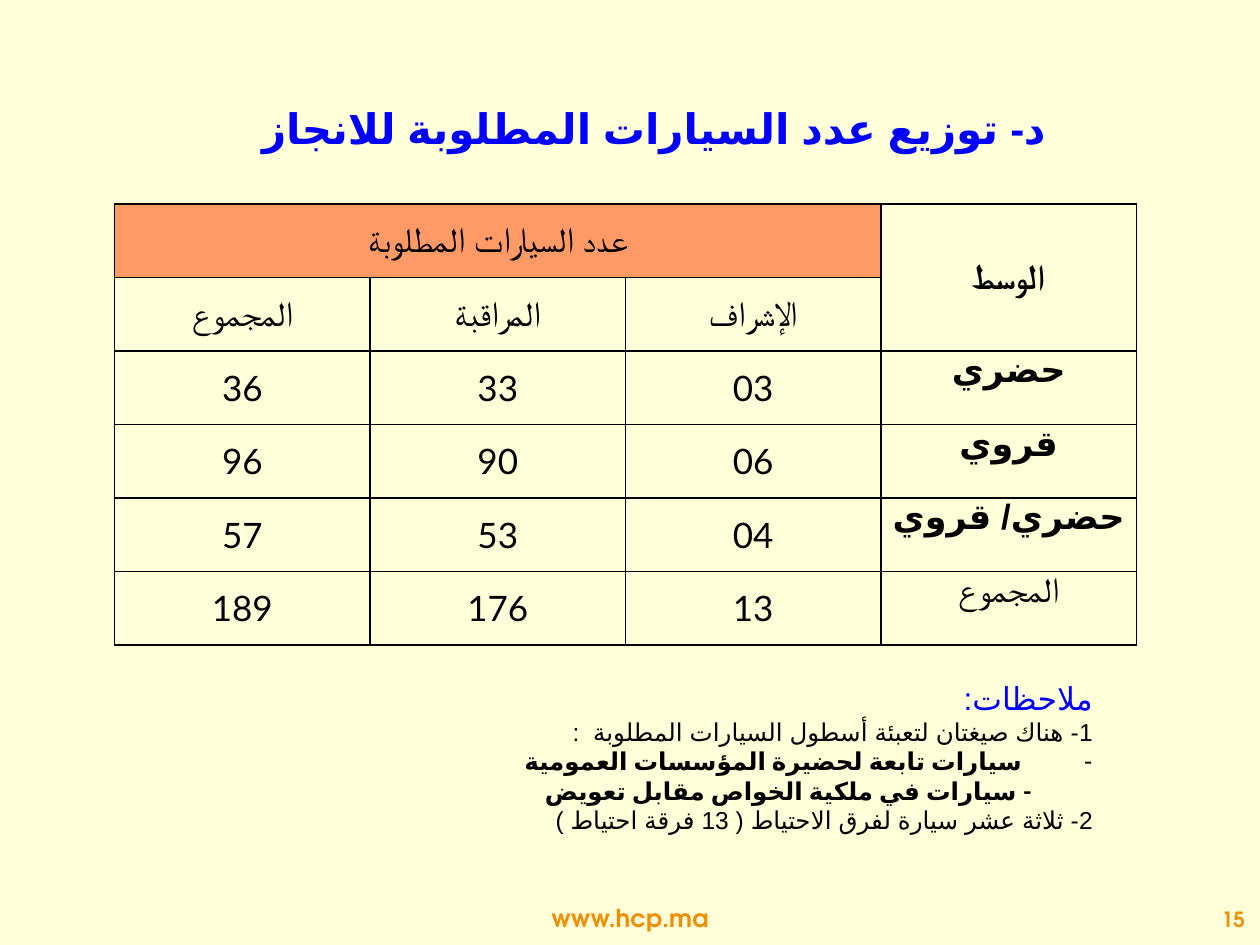
"""Build the slide on the distribution of required cars."""
from dataclasses import dataclass

from lxml import etree
from pptx import Presentation
from pptx.dml.color import RGBColor
from pptx.enum.lang import MSO_LANGUAGE_ID
from pptx.enum.text import MSO_ANCHOR, PP_ALIGN
from pptx.oxml.ns import qn
from pptx.util import Inches, Pt

ARABIC = MSO_LANGUAGE_ID.ARABIC_MOROCCO
TOP, MIDDLE = MSO_ANCHOR.TOP, MSO_ANCHOR.MIDDLE
CENTER, RIGHT = PP_ALIGN.CENTER, PP_ALIGN.RIGHT
COLORS = {"page": "FFFFD9", "blue": "0000FF", "black": "000000",
          "header": "FF9966", "orange": "F18E00"}
NOTE_INDENT = 0.74
CELL_FORMAT = {"margin_left": Inches(0.05), "margin_right": Inches(0.05),
               "margin_top": 0, "margin_bottom": 0}


@dataclass
class Line:
    text: str
    size: int
    font: str = "Arial"
    color: str = "black"
    bold: bool = False
    rtl: bool = False
    align: PP_ALIGN = CENTER
    margin: float = 0
    indent: float = 0
    bullet: str = ""


@dataclass
class Block:
    left: float
    top: float
    width: float
    height: float
    lines: list[Line]
    anchor: MSO_ANCHOR = MIDDLE


def rgb(name: str) -> RGBColor:
    return RGBColor.from_string(COLORS[name])


def write_line(paragraph, line: Line) -> None:
    paragraph.alignment = line.align
    properties = paragraph._p.get_or_add_pPr()
    if line.rtl:
        properties.set("rtl", "1")
    if line.indent:
        properties.set("marL", str(Inches(line.margin)))
        properties.set("indent", str(Inches(line.indent)))
    if line.bullet:
        etree.SubElement(properties, qn("a:buFont"), typeface=line.font)
        etree.SubElement(properties, qn("a:buChar"), char=line.bullet)
    run = paragraph.add_run()
    run.text = line.text
    font_format = {"name": line.font, "size": Pt(line.size), "bold": line.bold,
                   "language_id": ARABIC}
    for key, value in font_format.items():
        setattr(run.font, key, value)
    run.font.color.rgb = rgb(line.color)
    etree.SubElement(run._r.get_or_add_rPr(), qn("a:cs"), typeface=line.font)


def add_block(slide, block: Block) -> None:
    box = slide.shapes.add_textbox(Inches(block.left), Inches(block.top),
                                   Inches(block.width), Inches(block.height))
    frame = box.text_frame
    frame.word_wrap = True
    frame.vertical_anchor = block.anchor
    for index, line in enumerate(block.lines):
        write_line(frame.add_paragraph() if index else frame.paragraphs[0], line)


def add_borders(cell) -> None:
    properties = cell._tc.get_or_add_tcPr()
    for side in ("lnL", "lnR", "lnT", "lnB"):
        border = etree.SubElement(properties, qn(f"a:{side}"), w=str(Pt(1)))
        fill = etree.SubElement(border, qn("a:solidFill"))
        etree.SubElement(fill, qn("a:srgbClr"), val=COLORS["black"])


def cell_line(text: str, row: int, column: int) -> Line:
    is_setting = column == 3 and 2 <= row <= 4
    if is_setting:
        return Line(text, 20, bold=True, rtl=True)
    if row >= 2 and column < 3:
        return Line(text, 20, "Lato")
    return Line(text, 20, "Times New Roman", bold=row == 0 and column == 3)


def add_car_table(slide, rows: list[list[str]]) -> None:
    table = slide.shapes.add_table(len(rows), len(rows[0]), Inches(0.91), Inches(1.62),
                                   Inches(8.11), Inches(3.5)).table
    table.first_row = table.horz_banding = False
    for row, texts in enumerate(rows):
        for column, text in enumerate(texts):
            cell = table.cell(row, column)
            for key, value in CELL_FORMAT.items():
                setattr(cell, key, value)
            cell.vertical_anchor = TOP if row >= 2 and column == 3 else MIDDLE
            add_borders(cell)
            if row == 0 and column < 3:
                cell.fill.solid()
                cell.fill.fore_color.rgb = rgb("header")
            else:
                cell.fill.background()
            if text:
                write_line(cell.text_frame.paragraphs[0], cell_line(text, row, column))
    table.cell(0, 0).merge(table.cell(0, 2))
    table.cell(0, 3).merge(table.cell(1, 3))


def note(text: str, size: int = 14, indent: float = NOTE_INDENT, **style) -> Line:
    return Line(text, size, rtl=True, align=RIGHT, indent=indent, **style)


CAR_ROWS = [
    ["عدد السيارات المطلوبة", "", "", "الوسط"],
    ["المجموع", "المراقبة", "الإشراف", ""],
    ["36", "33", "03", "حضري"],
    ["96", "90", "06", "قروي"],
    ["57", "53", "04", "حضري/ قروي"],
    ["189", "176", "13", "المجموع"],
]
BRAND_STYLE = {"font": "TeX Gyre Adventor", "color": "orange", "bold": True}
FLEET_STYLE = {"font": "Lato", "bold": True}
BLOCKS = [
    Block(3.82, 7.12, 2.36, 0.33, [Line("www.hcp.ma", 14, **BRAND_STYLE)]),
    Block(1.33, 0.7, 7.72, 0.63, [
        Line("د- توزيع عدد السيارات المطلوبة للانجاز", 24, color="blue", bold=True, rtl=True)]),
    Block(0.39, 5.34, 9.12, 1.35, [
        note("ملاحظات:", 18, color="blue"),
        note("1- هناك صيغتان لتعبئة أسطول السيارات المطلوبة  :"),
        note("سيارات تابعة لحضيرة المؤسسات العمومية", indent=-0.56,
             margin=NOTE_INDENT + 0.56, bullet="-", **FLEET_STYLE),
        note("- سيارات في ملكية الخواص مقابل تعويض", indent=NOTE_INDENT + 0.48, **FLEET_STYLE),
        note("2- ثلاثة عشر سيارة لفرق الاحتياط ( 13 فرقة احتياط )"),
    ], TOP),
    Block(8.46, 7.12, 1.52, 0.35, [Line("15", 12, align=RIGHT, **BRAND_STYLE)]),
]


def main() -> None:
    deck = Presentation()
    deck.slide_width, deck.slide_height = Inches(10), Inches(7.5)
    slide = deck.slides.add_slide(deck.slide_layouts[6])
    slide.background.fill.solid()
    slide.background.fill.fore_color.rgb = rgb("page")
    add_car_table(slide, CAR_ROWS)
    for block in BLOCKS:
        add_block(slide, block)
    deck.save("out.pptx")


if __name__ == "__main__":
    main()
